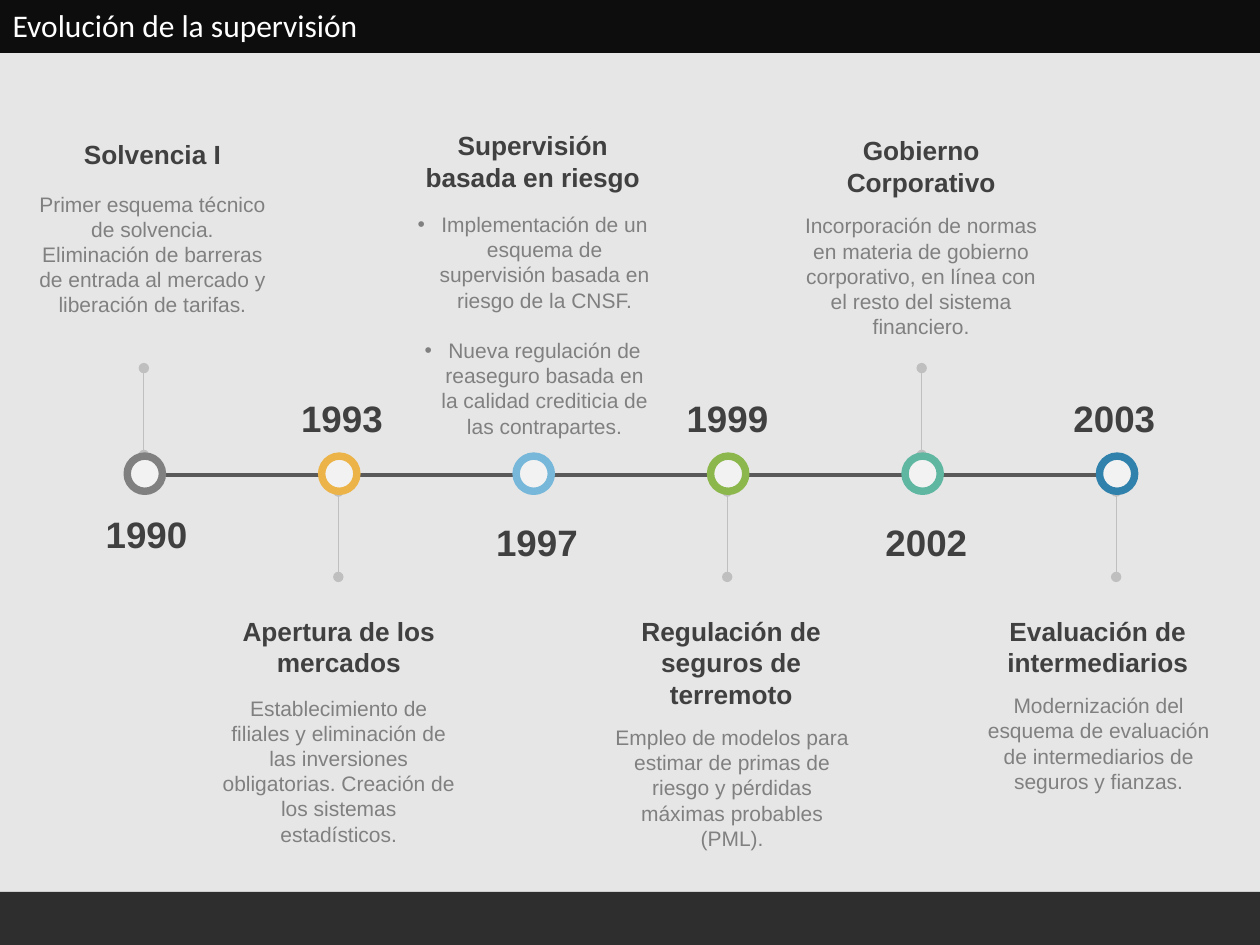
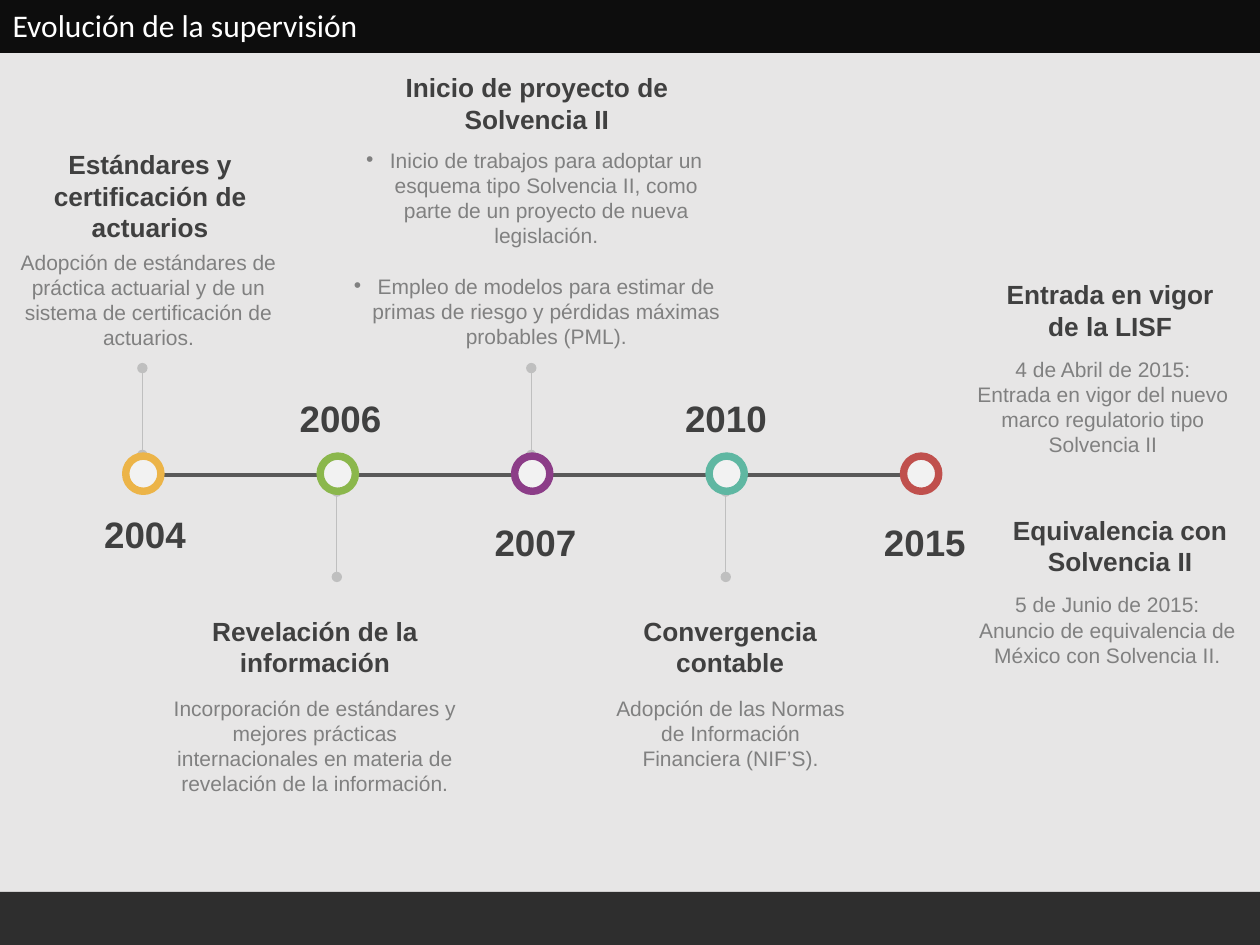
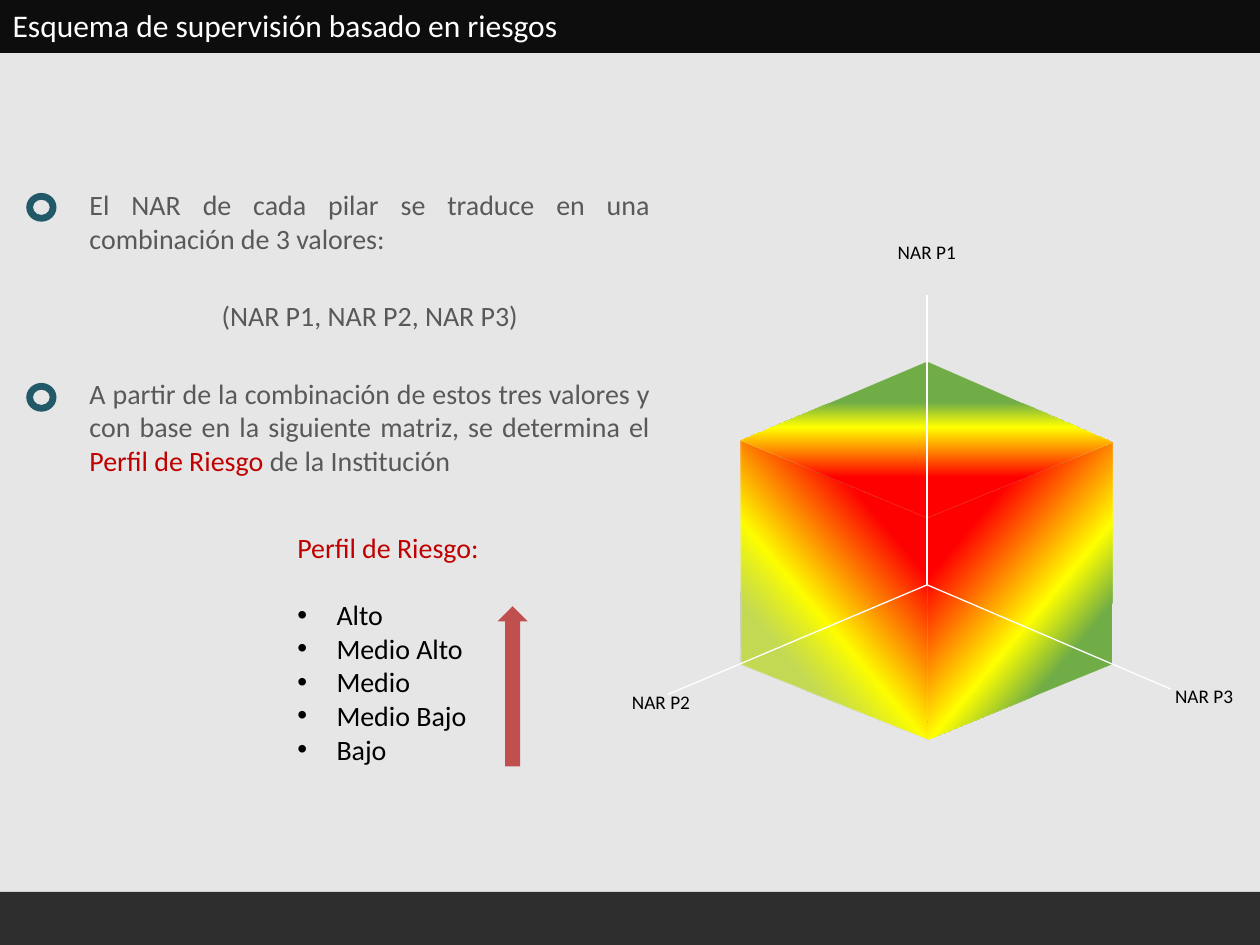
from dataclasses import dataclass
from typing import NamedTuple, Optional

import pptx
import pptx.dml.color
import pptx.enum.shapes
import pptx.enum.text
import pptx.oxml.ns
import pptx.presentation
import pptx.shapes.autoshape
import pptx.shapes.base
import pptx.slide
import pptx.text.text
import pptx.util
from lxml import etree

Cm = pptx.util.Cm
Pt = pptx.util.Pt
qn = pptx.oxml.ns.qn
Shape = pptx.enum.shapes.MSO_SHAPE
Align = pptx.enum.text.PP_ALIGN

# Shared look
BACKGROUND, BAND, FOOTER, WHITE, BLACK = "E7E6E6", "0D0D0D", "000000", "FFFFFF", "000000"
HEADING, DETAIL, BODY, RED = "404040", "808080", "595959", "C00000"
STALK, AXIS, NODE_FILL, BRICK, RING = "BFBFBF", "595959", "F2F2F2", "C0504D", "215968"


class Box(NamedTuple):
    """Left, top, width and height in centimetres."""
    left: float
    top: float
    width: float
    height: float


class Point(NamedTuple):
    x: float
    y: float


@dataclass
class Milestone:
    year: str
    color: str
    stalk: Optional[str] = None


@dataclass
class Card:
    heading: str
    heading_box: Box
    details: list[str]
    detail_box: Box
    bulleted: bool = False


@dataclass
class Face:
    corners: list[Point]
    low_color: str
    angle: int
    low_opacity: int = 100


def rgb(color: str) -> pptx.dml.color.RGBColor:
    return pptx.dml.color.RGBColor.from_string(color)


def lengths(values: tuple[float, ...]) -> list[pptx.util.Length]:
    return [Cm(value) for value in values]


def fade(parent: etree._Element, percent: int) -> None:
    for color in parent.iter(qn("a:srgbClr")):
        etree.SubElement(color, qn("a:alpha")).set("val", str(percent * 1000))


# Text
def add_span(para: pptx.text.text._Paragraph, text: str, *, size: float, color: str,
             font: str = "Arial", bold: bool = False) -> None:
    span = para.add_run()
    span.text = text
    span.font.size = Pt(size)
    span.font.name = font
    span.font.bold = bold
    span.font.color.rgb = rgb(color)


def add_para(frame: pptx.text.text.TextFrame, text: str, *, align: Align = Align.LEFT,
             before: float = 0, indent: float = 0, bullet: bool = False,
             **span_format) -> pptx.text.text._Paragraph:
    para = frame.paragraphs[0]
    if para.runs:
        para = frame.add_paragraph()
    properties = para._p.get_or_add_pPr()
    properties.set("marL", str(Cm(indent)))
    properties.set("indent", str(-Cm(indent)))
    if bullet:
        etree.SubElement(properties, qn("a:buFont")).set("typeface", "Arial")
        etree.SubElement(properties, qn("a:buChar")).set("char", "•")
    else:
        etree.SubElement(properties, qn("a:buNone"))
    para.alignment = align
    para.space_before = Pt(before)
    add_span(para, text, **span_format)
    return para


def add_text_box(page: pptx.slide.Slide, box: Box,
                 wrap: bool = True) -> pptx.text.text.TextFrame:
    frame = page.shapes.add_textbox(*lengths(box)).text_frame
    frame.word_wrap = wrap
    return frame


def place_placeholder(holder: pptx.shapes.base.BaseShape,
                      box: Box) -> pptx.text.text.TextFrame:
    holder.left, holder.top, holder.width, holder.height = lengths(box)
    frame = holder.text_frame
    frame.word_wrap = True
    frame.auto_size = pptx.enum.text.MSO_AUTO_SIZE.NONE
    frame.vertical_anchor = pptx.enum.text.MSO_ANCHOR.TOP
    return frame


# Shapes and lines
def add_shape(page: pptx.slide.Slide, kind: Shape, box: Box, fill: str,
              line: Optional[str] = None, width: float = 1) -> pptx.shapes.autoshape.Shape:
    shape = page.shapes.add_shape(kind, *lengths(box))
    shape.shadow.inherit = False
    shape.fill.solid()
    shape.fill.fore_color.rgb = rgb(fill)
    if line:
        shape.line.color.rgb = rgb(line)
        shape.line.width = Pt(width)
    else:
        shape.line.fill.background()
    return shape


def add_line(page: pptx.slide.Slide, start: Point, end: Point, color: str, width: float,
             oval_ends: bool = False) -> None:
    line = page.shapes.add_connector(pptx.enum.shapes.MSO_CONNECTOR.STRAIGHT,
                                     *lengths(start), *lengths(end))
    line.line.color.rgb = rgb(color)
    line.line.width = Pt(width)
    properties = line.element.spPr
    if oval_ends:
        for tag in ("a:headEnd", "a:tailEnd"):
            etree.SubElement(properties.find(qn("a:ln")), qn(tag)).set("type", "oval")
    etree.SubElement(properties, qn("a:effectLst"))


# Pages
def add_page(deck: pptx.presentation.Presentation, layout: int,
             title: str) -> pptx.slide.Slide:
    page = deck.slides.add_slide(deck.slide_layouts[layout])
    frame = place_placeholder(page.shapes.title, Box(0, 0, 25.4, 1.02))
    add_para(frame, title, size=18, color=WHITE, font="Calibri")
    return page


def dress_master(deck: pptx.presentation.Presentation, page: pptx.slide.Slide) -> None:
    """Draw the bands on a page, then move them to the master, behind everything."""
    master = deck.slide_master
    master.background.fill.solid()
    master.background.fill.fore_color.rgb = rgb(BACKGROUND)
    top_band = add_shape(page, Shape.RECTANGLE, Box(0, 0, 25.4, 1.07), BAND)
    footer = add_shape(page, Shape.RECTANGLE, Box(0, 17.98, 25.4, 1.07), FOOTER)
    fade(footer.element.spPr, 80)
    for band in (footer, top_band):
        master.shapes.element.insert(2, band.element)


# Timeline
NODE_STEP, NODE_SIZE, NODE_Y, AXIS_Y = 3.92, 0.71, 9.55, 9.58
STALK_SPANS = {"up": (7.42, 9.17), "down": (9.91, 11.63)}
# Each year label: offset from the first node, and top
YEAR_SPOTS = [(-1.04, 10.19), (2.9, 7.85), (6.83, 10.36),
              (10.67, 7.85), (14.68, 10.36), (18.47, 7.85)]


def draw_timeline(page: pptx.slide.Slide, first_x: float,
                  milestones: list[Milestone]) -> None:
    centers = [first_x + NODE_STEP * i for i in range(len(milestones))]
    for x, milestone in zip(centers, milestones):
        if milestone.stalk:
            top, bottom = STALK_SPANS[milestone.stalk]
            add_line(page, Point(x - 0.02, top), Point(x - 0.02, bottom), STALK, 0.5, True)
    add_line(page, Point(centers[0], AXIS_Y), Point(centers[-1], AXIS_Y), AXIS, 2.25)
    for x, milestone, (offset, top) in zip(centers, milestones, YEAR_SPOTS):
        node = Box(x - NODE_SIZE / 2, NODE_Y - NODE_SIZE / 2, NODE_SIZE, NODE_SIZE)
        add_shape(page, Shape.OVAL, node, NODE_FILL, milestone.color, 4.25)
        frame = add_text_box(page, Box(first_x + offset, top, 2.16, 1.14), wrap=False)
        add_para(frame, milestone.year, size=21, color=HEADING, bold=True)


def draw_card(page: pptx.slide.Slide, card: Card) -> None:
    frame = add_text_box(page, card.detail_box)
    for i, detail in enumerate(card.details):
        add_para(frame, detail, align=Align.CENTER, bullet=card.bulleted,
                 indent=0.48 if card.bulleted else 0,
                 before=14.4 if card.bulleted and i else 0, size=12, color=DETAIL)
    add_para(add_text_box(page, card.heading_box), card.heading, align=Align.CENTER,
             size=15, color=HEADING, bold=True)


FIRST_YEARS = [
    Milestone("1990", "808080", "up"), Milestone("1993", "ECB448", "down"),
    Milestone("1997", "77B7D9"), Milestone("1999", "8BB74C", "down"),
    Milestone("2002", "5FB7A2", "up"), Milestone("2003", "3081AC", "down"),
]
FIRST_CARDS = [
    Card("Apertura de los mercados", Box(4.19, 12.27, 5.28, 2.44),
         ["Establecimiento de filiales y eliminación de las inversiones obligatorias. "
          "Creación de los sistemas estadísticos."], Box(4.19, 13.89, 5.28, 3.33)),
    Card("Supervisión basada en riesgo", Box(8.1, 2.49, 5.28, 1.75),
         ["Implementación de un esquema de supervisión basada en riesgo de la CNSF.",
          "Nueva regulación de reaseguro basada en la calidad crediticia de las "
          "contrapartes."], Box(8.1, 4.14, 5.28, 5.54), bulleted=True),
    Card("Regulación de seguros de terremoto", Box(11.91, 12.27, 5.66, 2.18),
         ["Empleo de modelos para estimar de primas de riesgo y pérdidas máximas "
          "probables (PML)."], Box(12.12, 14.48, 5.28, 3.78)),
    Card("Gobierno Corporativo", Box(15.93, 2.59, 5.28, 2.21),
         ["Incorporación de normas en materia de gobierno corporativo, en línea con el "
          "resto del sistema financiero."], Box(15.93, 4.17, 5.28, 4.04)),
    Card("Solvencia I", Box(0.46, 2.67, 5.23, 0.89),
         ["Primer esquema técnico de solvencia. Eliminación de barreras de entrada al "
          "mercado y liberación de tarifas."], Box(0.46, 3.73, 5.23, 2.82)),
    Card("Evaluación de intermediarios", Box(19.3, 12.27, 5.66, 1.55),
         ["Modernización del esquema de evaluación de intermediarios de seguros y "
          "fianzas."], Box(19.51, 13.84, 5.28, 2.31)),
]
LATER_YEARS = [
    Milestone("2004", "ECB448", "up"), Milestone("2006", "8BB74C", "down"),
    Milestone("2007", "8C3D88", "up"), Milestone("2010", "5FB7A2", "down"),
    Milestone("2015", BRICK),
]
LATER_CARDS = [
    Card("Revelación de la información", Box(3.25, 12.27, 6.2, 1.55),
         ["Incorporación de estándares y mejores prácticas internacionales en materia de "
          "revelación de la información."], Box(3.25, 13.89, 6.2, 2.82)),
    Card("Inicio de proyecto de Solvencia II", Box(6.76, 1.32, 8.13, 1.55),
         ["Inicio de trabajos para adoptar un esquema tipo Solvencia II, como parte de un "
          "proyecto de nueva legislación.",
          "Empleo de modelos para estimar de primas de riesgo y pérdidas máximas "
          "probables (PML)."], Box(6.71, 2.84, 8.13, 5.89), bulleted=True),
    Card("Convergencia contable", Box(11.89, 12.27, 5.66, 1.55),
         ["Adopción de las Normas de Información Financiera (NIF’S)."],
         Box(12.09, 13.89, 5.28, 1.8)),
    Card("Entrada en vigor de la LISF", Box(19.74, 5.49, 5.28, 1.55),
         ["4 de Abril de 2015:",
          "Entrada en vigor del nuevo marco regulatorio tipo Solvencia II"],
         Box(19.43, 7.06, 5.61, 2.31)),
    Card("Estándares y certificación de actuarios", Box(-0.2, 2.87, 6.45, 2.18),
         ["Adopción de estándares de práctica actuarial y de un sistema de certificación "
          "de actuarios."], Box(-0.23, 4.9, 6.45, 2.82)),
    Card("Equivalencia con Solvencia II", Box(19.94, 10.24, 5.28, 1.55),
         ["5 de Junio de 2015:", "Anuncio de equivalencia de México con Solvencia II."],
         Box(19.43, 11.81, 5.79, 1.8)),
]

# Risk cube
TOP, INNER, BOTTOM = Point(18.69, 7.29), Point(18.69, 10.44), Point(18.71, 14.91)
LEFT_TOP, LEFT_LOW = Point(14.94, 8.88), Point(14.95, 13.39)
RIGHT_TOP, RIGHT_LOW = Point(22.43, 8.92), Point(22.43, 13.39)
ORIGIN = Point(18.69, 11.79)
AXIS_ENDS = [Point(18.69, 5.94), Point(13.46, 14), Point(23.6, 13.89)]
AXIS_LABELS = {"NAR P1": Point(17.07, 4.72), "NAR P2": Point(11.71, 13.79),
               "NAR P3": Point(22.66, 13.67)}
FACES = [
    Face([LEFT_LOW, LEFT_TOP, INNER, BOTTOM], "B8D624", 40, 74),
    Face([INNER, RIGHT_TOP, RIGHT_LOW, BOTTOM], "70AD47", 140),
    Face([LEFT_TOP, TOP, RIGHT_TOP, INNER], "70AD47", 270),
]


def draw_face(page: pptx.slide.Slide, face: Face) -> None:
    start, *others = [lengths(corner) for corner in face.corners]
    builder = page.shapes.build_freeform(*start)
    builder.add_line_segments(others, close=True)
    shape = builder.convert_to_shape()
    shape.shadow.inherit = False
    shape.fill.gradient()
    shape.fill.gradient_angle = face.angle
    stops = shape.element.spPr.find(".//" + qn("a:gsLst"))
    for stop in list(stops):
        stops.remove(stop)
    for position, color in ((26, face.low_color), (42, "FFFF00"), (74, "FF0000")):
        stop = etree.SubElement(stops, qn("a:gs"))
        stop.set("pos", str(position * 1000))
        etree.SubElement(stop, qn("a:srgbClr")).set("val", color)
    if face.low_opacity < 100:
        fade(stops[0], face.low_opacity)
    shape.line.color.rgb = rgb(WHITE)
    shape.line.width = Pt(0.25)
    fade(shape.element.spPr.find(qn("a:ln")), 18)


def draw_cube(page: pptx.slide.Slide) -> None:
    for face in FACES:
        draw_face(page, face)
    for end in AXIS_ENDS:
        add_line(page, end, ORIGIN, WHITE, 0.75)
    for label, spot in AXIS_LABELS.items():
        add_para(add_text_box(page, Box(*spot, 3.23, 0.74)), label, align=Align.CENTER,
                 size=11, color=BLACK, font="Calibri")


def draw_risk_profile(page: pptx.slide.Slide) -> None:
    style = {"size": 16, "font": "Calibri"}
    # Explanation
    frame = place_placeholder(page.placeholders[1], Box(1.55, 3.66, 11.81, 3.53))
    add_para(frame, "El NAR de cada pilar se traduce en una combinación de 3 valores:",
             align=Align.JUSTIFY, color=BODY, **style)
    add_para(frame, "(NAR P1, NAR P2, NAR P3)", align=Align.CENTER, before=25,
             color=BODY, **style)
    para = add_para(frame, "A partir de la combinación de estos tres valores y con base en "
                    "la siguiente matriz, se determina el ", align=Align.JUSTIFY, before=25,
                    color=BODY, **style)
    add_span(para, "Perfil de Riesgo ", color=RED, **style)
    add_span(para, "de la Institución", color=BODY, **style)
    # Levels
    frame = place_placeholder(page.placeholders[2], Box(5.74, 10.57, 4.52, 5.05))
    add_para(frame, "Perfil de Riesgo:", color=RED, **style)
    for i, level in enumerate(["Alto", "Medio Alto", "Medio", "Medio Bajo", "Bajo"]):
        add_para(frame, level, before=0 if i else 19.2, indent=0.79, bullet=True,
                 color=BLACK, **style)
    add_shape(page, Shape.UP_ARROW, Box(10.03, 12.22, 0.61, 3.23), BRICK)
    for top in (3.89, 7.72):
        ring = add_shape(page, Shape.DONUT, Box(0.53, top, 0.61, 0.58), RING)
        ring.adjustments[0] = 0.235


def main() -> None:
    deck = pptx.Presentation()
    deck.slide_width, deck.slide_height = Cm(25.4), Cm(19.05)

    page = add_page(deck, 5, "Evolución de la supervisión")
    dress_master(deck, page)
    draw_timeline(page, 2.92, FIRST_YEARS)
    for card in FIRST_CARDS:
        draw_card(page, card)

    page = add_page(deck, 5, "Evolución de la supervisión")
    draw_timeline(page, 2.89, LATER_YEARS)
    for card in LATER_CARDS:
        draw_card(page, card)

    page = add_page(deck, 3, "Esquema de supervisión basado en riesgos")
    draw_risk_profile(page)
    draw_cube(page)

    deck.save("out.pptx")


if __name__ == "__main__":
    main()
